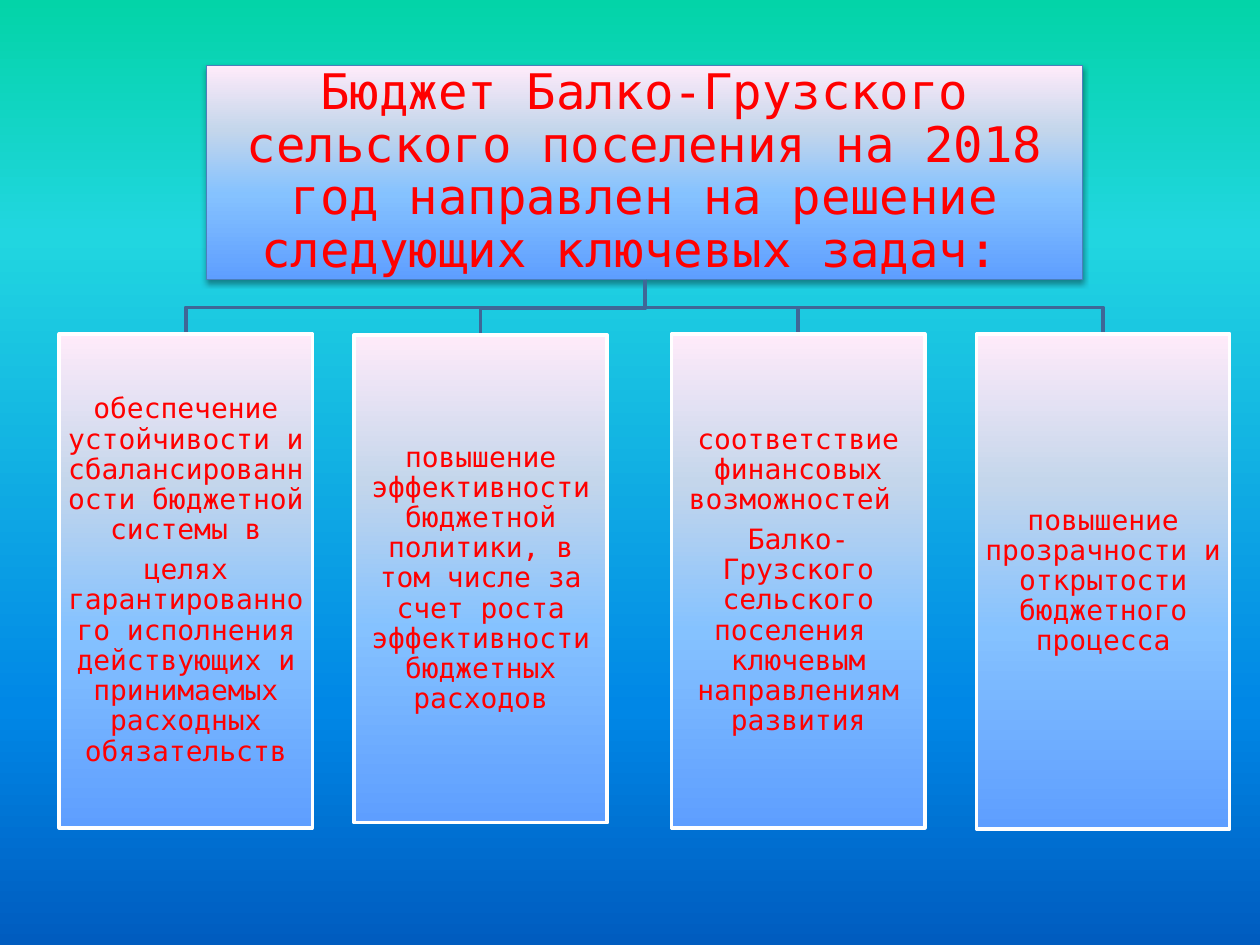
from copy import deepcopy
from dataclasses import dataclass

from pptx import Presentation
from pptx.dml.color import RGBColor
from pptx.enum import shapes, text
from pptx.oxml import parse_xml
from pptx.oxml.ns import nsdecls, qn
from pptx.util import Inches, Pt

RED = RGBColor(0xFF, 0x00, 0x00)
WHITE = RGBColor(0xFF, 0xFF, 0xFF)
EDGE = RGBColor(0x4B, 0x7E, 0xBC)
LINK = RGBColor(0x3F, 0x67, 0x97)
SKY = [
    (0, RGBColor(0x03, 0xD4, 0xA8)),
    (0.25, RGBColor(0x21, 0xD6, 0xE0)),
    (0.75, RGBColor(0x00, 0x87, 0xE6)),
    (1, RGBColor(0x00, 0x5C, 0xBF)),
]
PANEL = [
    (0, RGBColor(0x5E, 0x9E, 0xFF)),
    (0.4, RGBColor(0x85, 0xC2, 0xFF)),
    (0.7, RGBColor(0xC4, 0xD6, 0xEB)),
    (1, RGBColor(0xFF, 0xEB, 0xFA)),
]
FONT = "DejaVu Sans Mono"
ROOT_X, ROOT_Y = 5.12, 2.22
WIDTH = 2.01


@dataclass
class Task:
    left: float
    top: float
    height: float
    lines: list[str]


TASKS = [
    Task(0.47, 2.65, 3.92, [
        "обеспечение устойчивости и сбалансированности бюджетной системы в",
        "целях гарантированного исполнения действующих и принимаемых расходных обязательств",
    ]),
    Task(2.81, 2.66, 3.87, [
        "повышение эффективности бюджетной политики, в том числе за счет роста "
        "эффективности бюджетных расходов",
    ]),
    Task(5.33, 2.65, 3.92, [
        "соответствие финансовых возможностей ",
        "Балко-Грузского сельского поселения  ключевым направлениям развития",
    ]),
    Task(7.75, 2.65, 3.93, [
        "повышение прозрачности и открытости бюджетного процесса",
    ]),
]


def blend(fill, root, stops: list, angle: int) -> None:
    fill.gradient()
    fill.gradient_angle = angle
    group = next(root.iter(qn("a:gsLst")))
    for _ in stops[2:]:
        group.append(deepcopy(group[0]))
    for stop, (pos, color) in zip(fill.gradient_stops, stops):
        stop.position = pos
        stop.color.rgb = color


def style(box, edge: RGBColor, weight: float) -> None:
    blend(box.fill, box.element, PANEL, 90)
    box.line.color.rgb = edge
    box.line.width = Pt(weight)
    box.shadow.inherit = False


def write(box, lines: list[str], size: int, inset: float) -> None:
    frame = box.text_frame
    frame.word_wrap = True
    frame.auto_size = text.MSO_AUTO_SIZE.NONE
    frame.vertical_anchor = text.MSO_ANCHOR.MIDDLE
    frame.margin_left = frame.margin_right = Inches(inset)
    frame.margin_top = frame.margin_bottom = Inches(inset)
    for i, line in enumerate(lines):
        para = frame.add_paragraph() if i else frame.paragraphs[0]
        para.alignment = text.PP_ALIGN.CENTER
        para.line_spacing = 0.9
        para.space_after = Pt(size * 0.35)
        run = para.add_run()
        run.text = line
        run.font.name = FONT
        run.font.size = Pt(size)
        run.font.color.rgb = RED


def link(slide, task: Task) -> None:
    mid, bend = task.left + WIDTH / 2, task.top - 0.21
    path = slide.shapes.build_freeform(Inches(ROOT_X), Inches(ROOT_Y))
    points = [(ROOT_X, bend), (mid, bend), (mid, task.top)]
    path.add_line_segments([(Inches(x), Inches(y)) for x, y in points], close=False)
    line = path.convert_to_shape()
    line.fill.background()
    line.line.color.rgb = LINK
    line.line.width = Pt(2)
    line.shadow.inherit = False


def head(slide) -> None:
    box = slide.shapes.title
    box.left, box.top = Inches(1.64), Inches(0.52)
    box.width, box.height = Inches(6.95), Inches(1.7)
    style(box, EDGE, 0.75)
    box.element.spPr.find(qn("a:effectLst")).append(parse_xml(
        f'<a:outerShdw {nsdecls("a")} blurRad="{Pt(3.1)}" dist="{Pt(1.6)}" '
        'dir="5400000" rotWithShape="0"><a:srgbClr val="000000">'
        '<a:alpha val="38000"/></a:srgbClr></a:outerShdw>'
    ))
    write(box, [
        "Бюджет Балко-Грузского сельского поселения на 2018 год направлен "
        "на решение следующих ключевых задач: ",
    ], 28, 0.02)


def card(slide, task: Task) -> None:
    box = slide.shapes.add_shape(
        shapes.MSO_SHAPE.RECTANGLE,
        Inches(task.left), Inches(task.top), Inches(WIDTH), Inches(task.height),
    )
    style(box, WHITE, 2)
    write(box, task.lines, 16, 0.01)


def main() -> None:
    deck = Presentation()
    deck.slide_width, deck.slide_height = Inches(10), Inches(7.5)
    slide = deck.slides.add_slide(deck.slide_layouts[5])
    blend(slide.background.fill, slide.element, SKY, 270)
    for task in reversed(TASKS):
        link(slide, task)
    head(slide)
    for task in TASKS:
        card(slide, task)
    deck.save("out.pptx")


if __name__ == "__main__":
    main()
